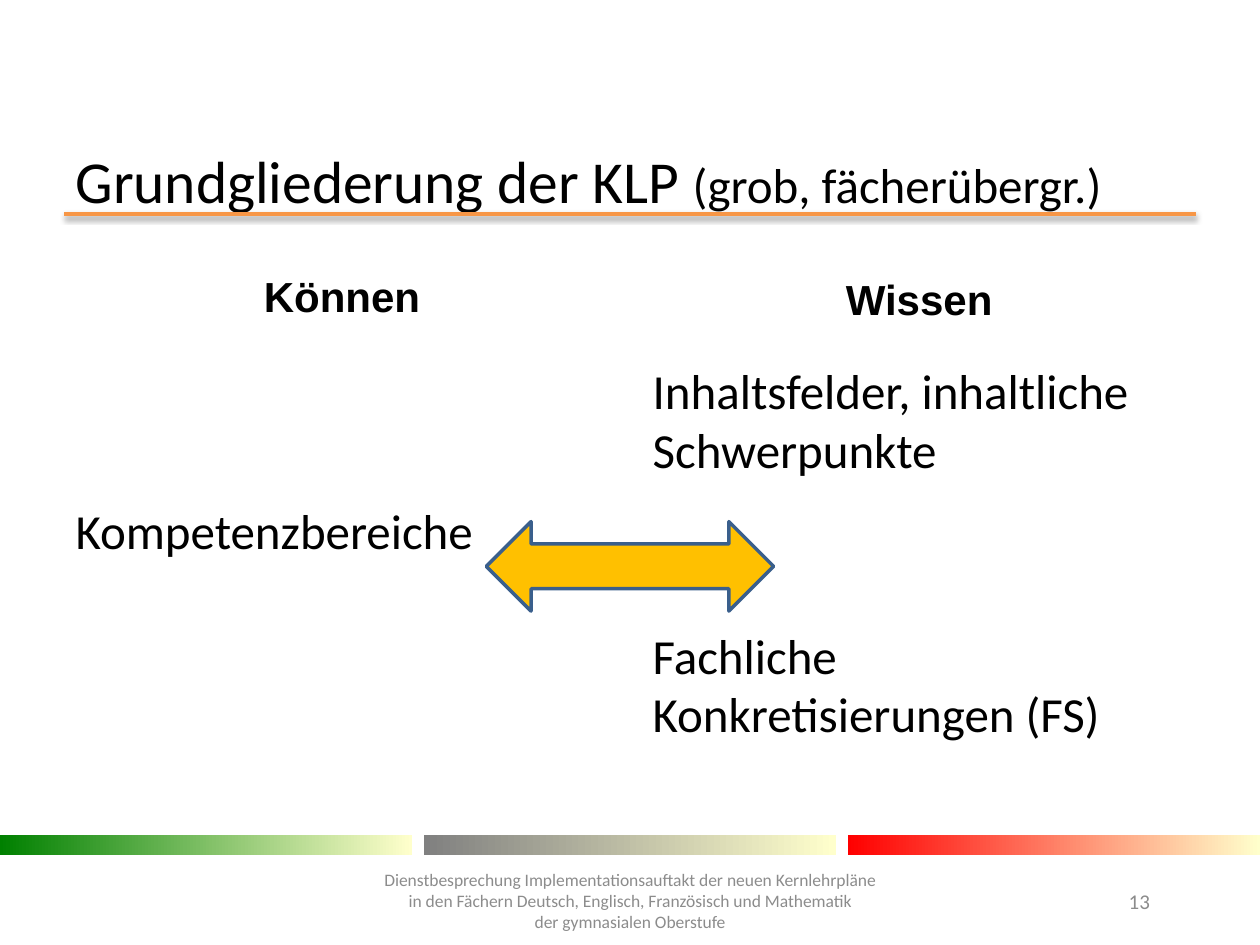
from lxml.etree import SubElement
from pptx import Presentation
from pptx.dml.color import RGBColor
from pptx.enum.shapes import MSO_CONNECTOR as LINE, MSO_SHAPE as SHAPE
from pptx.enum.text import MSO_ANCHOR as ANCHOR, MSO_AUTO_SIZE as FIT, PP_ALIGN as ALIGN
from pptx.oxml.ns import qn
from pptx.util import Inches, Pt

BLACK = RGBColor(0x00, 0x00, 0x00)
WHITE = RGBColor(0xFF, 0xFF, 0xFF)
GREY = RGBColor(0x8C, 0x8C, 0x8C)
CREAM = RGBColor(0xFF, 0xFF, 0xCC)
ORANGE = RGBColor(0xF7, 0x96, 0x46)
GOLD = RGBColor(0xFF, 0xC0, 0x00)
BLUE = RGBColor(0x3A, 0x5F, 0x8C)
BARS = (RGBColor(0x00, 0x80, 0x00), RGBColor(0x80, 0x80, 0x80), RGBColor(0xFF, 0x00, 0x00))

MAIN = {"name": "Calibri", "size": Pt(28), "bold": False}
TITLE = {**MAIN, "size": Pt(34)}
HEAD = {"name": "Arial", "size": Pt(24), "bold": True}
FOOT = {"name": "Calibri", "size": Pt(10), "bold": False}
PAGE = {**FOOT, "size": Pt(12)}


class Deck:
    """Lengths are given in percent of the slide's width and height."""

    def __init__(self):
        self.prs = Presentation()
        self.prs.slide_width, self.prs.slide_height = Inches(10), Inches(7.5)
        self.slide = self.prs.slides.add_slide(self.prs.slide_layouts[3])
        self.shapes = self.slide.shapes

    def area(self, x, y, w, h):
        wide, high = self.prs.slide_width, self.prs.slide_height
        return [int(part * full / 100) for part, full in
                ((x, wide), (y, high), (w, wide), (h, high))]

    def font(self, run, style, color=BLACK):
        for key, value in style.items():
            setattr(run.font, key, value)
        run.font.color.rgb = color

    def fit(self, holder, box, anchor):
        """Move a placeholder and give its text a fixed size."""
        holder.left, holder.top, holder.width, holder.height = self.area(*box)
        frame = holder.text_frame
        frame.auto_size, frame.vertical_anchor = FIT.NONE, anchor
        return frame

    def title(self, box, parts):
        para = self.fit(self.shapes.title, box, ANCHOR.MIDDLE).paragraphs[0]
        para.alignment = ALIGN.LEFT
        for words, style in parts:
            run = para.add_run()
            run.text = words
            self.font(run, style)

    def body(self, index, box, lines, gap=0, top=0.05):
        holder = self.slide.placeholders[index]
        holder.fill.solid()
        holder.fill.fore_color.rgb = WHITE
        frame = self.fit(holder, box, ANCHOR.TOP)
        frame.margin_top = Inches(top)
        for i, words in enumerate(lines):
            para = frame.add_paragraph() if i else frame.paragraphs[0]
            props = para._p.get_or_add_pPr()
            props.set("marL", "0")
            props.set("indent", "0")
            SubElement(props, qn("a:buNone"))
            para.space_before = Pt(gap if i else 0)
            run = para.add_run()
            run.text = words
            self.font(run, MAIN)

    def text(self, box, words, style, color=BLACK, align=ALIGN.CENTER, anchor=ANCHOR.TOP):
        frame = self.shapes.add_textbox(*self.area(*box)).text_frame
        frame.word_wrap, frame.vertical_anchor = True, anchor
        para = frame.paragraphs[0]
        para.text, para.alignment = words, align
        for run in para.runs:
            self.font(run, style, color)

    def rule(self, x, y, w):
        """Draw a level line with a soft shadow below it."""
        left, top, width, _ = self.area(x, y, w, 0)
        line = self.shapes.add_connector(LINE.STRAIGHT, left, top, left + width, top)
        line.line.color.rgb, line.line.width = ORANGE, Pt(2)
        effects = SubElement(line._element.spPr, qn("a:effectLst"))
        shade = SubElement(effects, qn("a:outerShdw"), blurRad=str(Pt(3.1)),
                           dist=str(Pt(1.6)), dir="5400000", rotWithShape="0")
        tint = SubElement(shade, qn("a:srgbClr"), val=str(BLACK))
        SubElement(tint, qn("a:alpha"), val="38000")

    def shape(self, kind, box):
        item = self.shapes.add_shape(kind, *self.area(*box))
        item.shadow.inherit = False
        return item

    def bar(self, box, color):
        item = self.shape(SHAPE.RECTANGLE, box)
        item.line.fill.background()
        item.fill.gradient()
        item.fill.gradient_angle = 0
        for stop, place, shade in zip(item.fill.gradient_stops, (0, 1), (color, CREAM)):
            stop.position, stop.color.rgb = place, shade

    def arrow(self, box):
        item = self.shape(SHAPE.LEFT_RIGHT_ARROW, box)
        item.fill.solid()
        item.fill.fore_color.rgb = GOLD
        item.line.color.rgb, item.line.width = BLUE, Pt(2)


def main():
    deck = Deck()
    deck.rule(5.1, 22.67, 89.8)
    wide = 32.7
    for i, color in enumerate(BARS):
        deck.bar((i * (100 - wide) / 2, 88.4, wide, 2.13), color)

    deck.title((5, 16.4, 90, 5.2),
               [("Grundgliederung der KLP ", TITLE), ("(grob, fächerübergr.)", MAIN)])
    left, right = 5, 50.8
    deck.body(1, (left, 37.47, 44.2, 48.27), ["Kompetenzbereiche"], top=1.16)
    deck.body(2, (right, 37.47, 44.2, 48.27),
              ["Inhaltsfelder, inhaltliche Schwerpunkte",
               "Fachliche Konkretisierungen (FS)"], gap=84)
    for x, y, words in ((left, 28, "Können"), (right, 28.27, "Wissen")):
        deck.text((x + 1.6, y, 41.1, 6.67), words, HEAD)
    deck.arrow((38.6, 55.2, 22.8, 9.47))

    deck.text((25.6, 91.6, 48.8, 7.47),
              "Dienstbesprechung Implementationsauftakt der neuen Kernlehrpläne\v"
              "in den Fächern Deutsch, Englisch, Französisch und Mathematik\v"
              "der gymnasialen Oberstufe", FOOT, GREY, anchor=ANCHOR.MIDDLE)
    deck.text((88.6, 93.33, 6.4, 5.33), "13", PAGE, GREY, ALIGN.LEFT)
    deck.prs.save("out.pptx")


if __name__ == "__main__":
    main()
